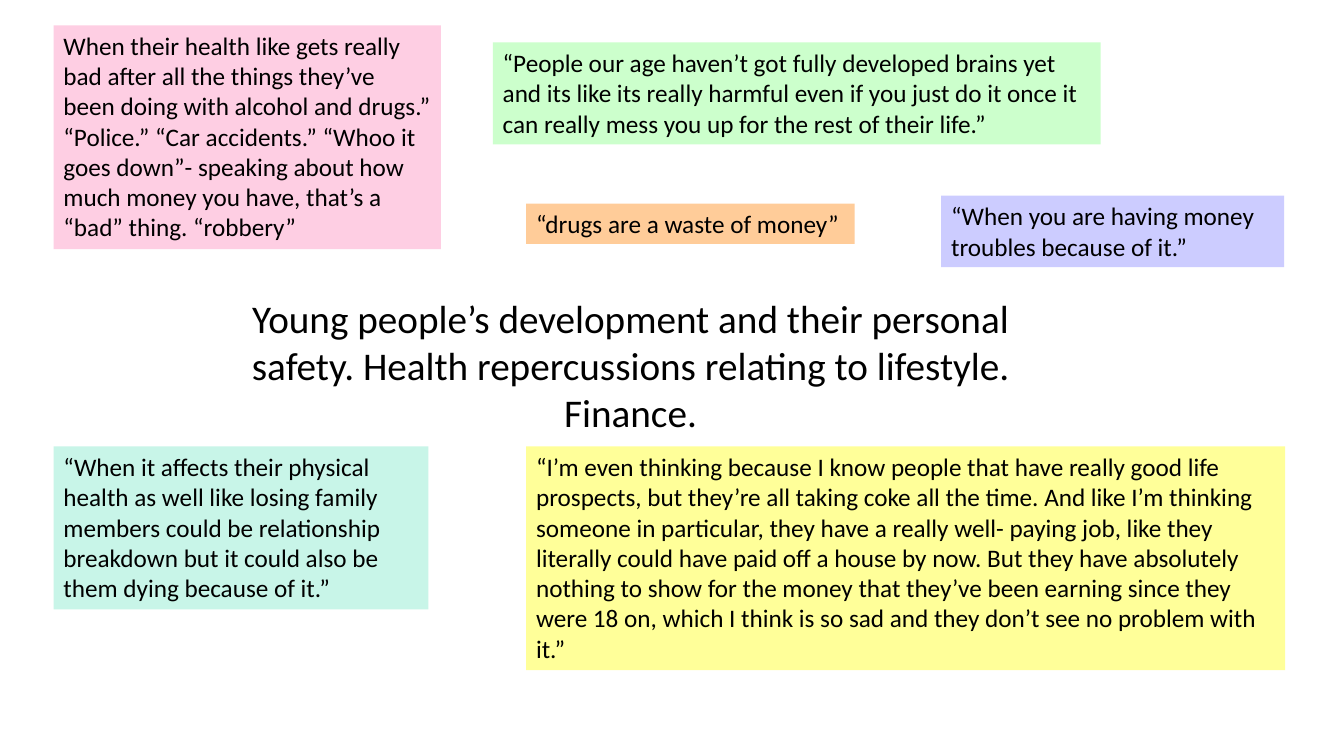
from dataclasses import dataclass

from pptx import Presentation
from pptx.dml.color import RGBColor
from pptx.enum.text import MSO_ANCHOR, MSO_AUTO_SIZE, PP_ALIGN
from pptx.util import Cm, Pt


@dataclass(frozen=True)
class Theme:
    """Colours and type sizes of the slide."""
    font: str = "Calibri"
    title_size: int = 28
    quote_size: int = 18
    text: str = "000000"
    paper: str = "FFFFFF"
    pink: str = "FECEE3"
    mint: str = "C8F5E8"
    yellow: str = "FFFF99"
    green: str = "CCFFCC"
    lilac: str = "CCCCFF"
    orange: str = "FFCC99"


THEME = Theme()
LEFT_EDGE, MIDDLE_EDGE, LOWER_EDGE = 1.35, 13.26, 11.25

TITLE = (
    "Young people’s development and their personal safety. "
    "Health repercussions relating to lifestyle. Finance."
)
QUOTES = [
    (LEFT_EDGE, 0.64, 9.76, 5.64, THEME.pink,
     "When their health like gets really bad after all the things they’ve "
     "been doing with alcohol and drugs.” “Police.” “Car accidents.” “Whoo it "
     "goes down”- speaking about how much money you have, that’s a “bad” "
     "thing. “robbery”"),
    (LEFT_EDGE, LOWER_EDGE, 9.45, 4.11, THEME.mint,
     "“When it affects their physical health as well like losing family "
     "members could be relationship breakdown but it could also be them "
     "dying because of it.”"),
    (MIDDLE_EDGE, LOWER_EDGE, 19.13, 5.64, THEME.yellow,
     "“I’m even thinking because I know people that have really good life "
     "prospects, but they’re all taking coke all the time. And like I’m "
     "thinking someone in particular, they have a really well- paying job, "
     "like they literally could have paid off a house by now. But they have "
     "absolutely nothing to show for the money that they’ve been earning "
     "since they were 18 on, which I think is so sad and they don’t see no "
     "problem with it.”"),
    (12.42, 1.07, 15.32, 2.57, THEME.green,
     "“People our age haven’t got fully developed brains yet and its like "
     "its really harmful even if you just do it once it can really mess you "
     "up for the rest of their life.”"),
    (23.72, 4.93, 8.64, 1.8, THEME.lilac,
     "“When you are having money troubles because of it.”"),
    (MIDDLE_EDGE, 5.13, 8.28, 1.02, THEME.orange,
     "“drugs are a waste of money”"),
]


def write_box(box, text, size, fill, align):
    """Fill a box with colour and one formatted paragraph."""
    box.fill.solid()
    box.fill.fore_color.rgb = RGBColor.from_string(fill)
    frame = box.text_frame
    frame.text = text
    frame.word_wrap = True
    frame.auto_size = MSO_AUTO_SIZE.SHAPE_TO_FIT_TEXT
    frame.vertical_anchor = MSO_ANCHOR.TOP
    para = frame.paragraphs[0]
    para.alignment = align
    para.font.name = THEME.font
    para.font.size = Pt(size)
    para.font.color.rgb = RGBColor.from_string(THEME.text)


def place_title(page):
    """Move and format the title placeholder."""
    title = page.shapes.title
    title.left, title.top = Cm(4.98), Cm(7.29)
    title.width, title.height = Cm(21.82), Cm(3.84)
    write_box(title, TITLE, THEME.title_size, THEME.paper, PP_ALIGN.CENTER)


def add_quote(page, left, top, width, height, fill, text):
    """Add one coloured quotation box."""
    box = page.shapes.add_textbox(Cm(left), Cm(top), Cm(width), Cm(height))
    write_box(box, text, THEME.quote_size, fill, PP_ALIGN.LEFT)


def main():
    """Build and save the slide."""
    deck = Presentation()
    deck.slide_width, deck.slide_height = Cm(33.87), Cm(19.05)
    page = deck.slides.add_slide(deck.slide_layouts.get_by_name("Title Only"))
    place_title(page)
    for quote in QUOTES:
        add_quote(page, *quote)
    deck.save("out.pptx")


if __name__ == "__main__":
    main()
